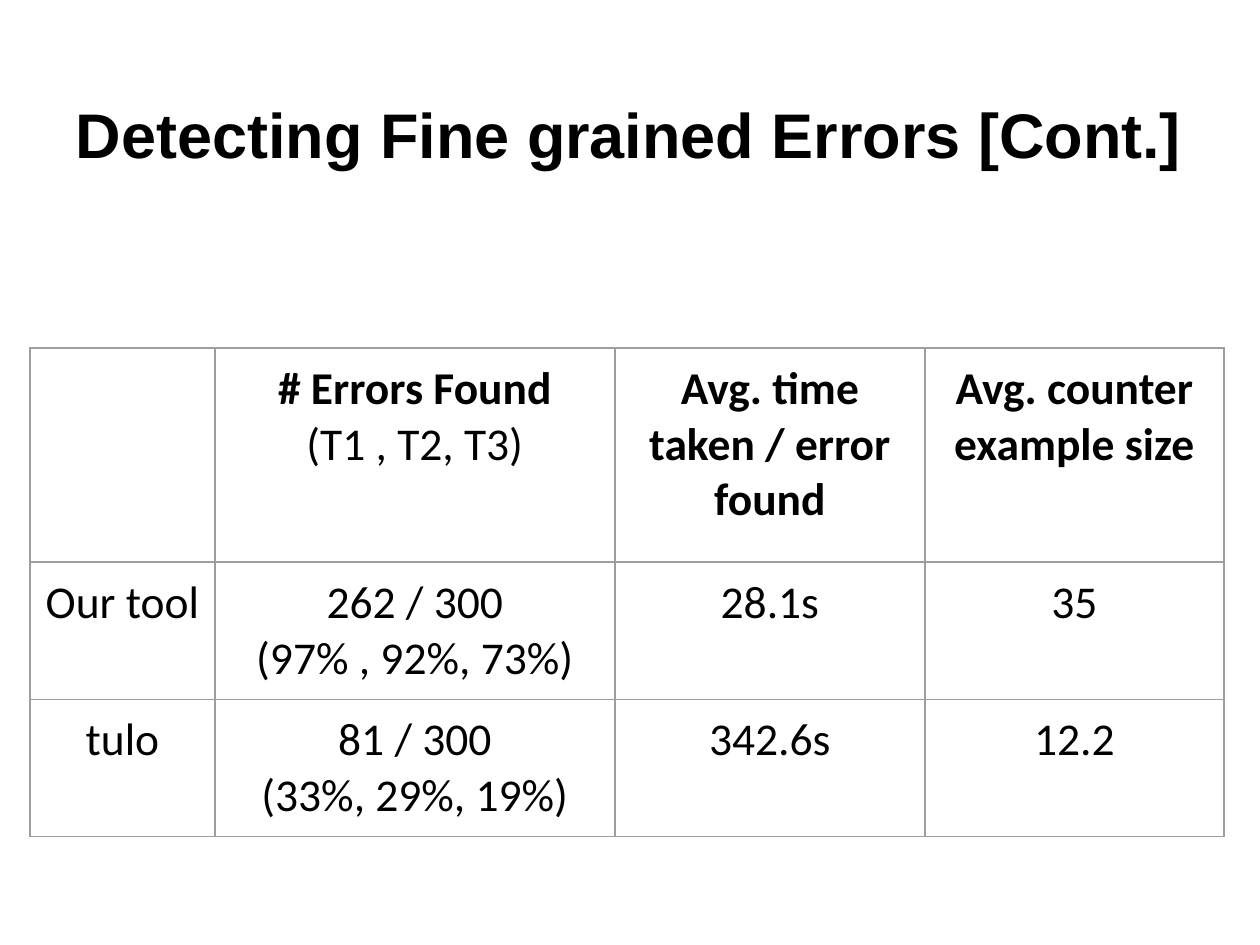
from dataclasses import dataclass

from lxml import etree
from pptx import Presentation
from pptx.dml.color import RGBColor
from pptx.enum.text import MSO_ANCHOR, PP_ALIGN
from pptx.oxml.ns import qn
from pptx.util import Pt

PX = 914400 // 126  # EMU per pixel
BLACK = RGBColor(0x00, 0x00, 0x00)
GRAY = RGBColor(0x9E, 0x9E, 0x9E)
LEFT, CENTER = PP_ALIGN.LEFT, PP_ALIGN.CENTER
TOP, BOTTOM = MSO_ANCHOR.TOP, MSO_ANCHOR.BOTTOM
INSET = 13
TITLE_ONLY = 5


@dataclass(frozen=True)
class Line:
    text: str
    bold: bool = False


COLUMN_WIDTHS = (185, 400, 310, 299)
ROW_HEIGHTS = (214, 136, 137)
ROWS = (
    (
        (),
        (Line("# Errors Found", True), Line("(T1 , T2, T3)")),
        (Line("Avg. time taken / error found", True),),
        (Line("Avg. counter example size", True),),
    ),
    (
        (Line("Our tool"),),
        (Line("262 / 300"), Line("(97% , 92%, 73%)")),
        (Line("28.1s"),),
        (Line("35"),),
    ),
    (
        (Line("tulo"),),
        (Line("81 / 300"), Line("(33%, 29%, 19%)")),
        (Line("342.6s"),),
        (Line("12.2"),),
    ),
)


def px(length: int) -> int:
    return length * PX


def set_insets(box) -> None:
    box.margin_left = box.margin_right = px(INSET)
    box.margin_top = box.margin_bottom = px(INSET)


def add_span(para, text: str, font: str, size: int, bold: bool) -> None:
    span = para.add_run()
    span.text = text
    span.font.name = font
    span.font.size = Pt(size)
    span.font.bold = bold
    span.font.color.rgb = BLACK


def set_borders(cell) -> None:
    properties = cell._tc.get_or_add_tcPr()
    for index, side in enumerate(("lnL", "lnR", "lnT", "lnB")):
        line = etree.Element(qn(f"a:{side}"), w=str(Pt(0.75)))
        fill = etree.SubElement(line, qn("a:solidFill"))
        etree.SubElement(fill, qn("a:srgbClr"), val=str(GRAY))
        properties.insert(index, line)


def fill_cell(cell, lines: tuple[Line, ...]) -> None:
    cell.fill.background()
    cell.vertical_anchor = TOP
    set_insets(cell)
    set_borders(cell)
    frame = cell.text_frame
    for index, line in enumerate(lines):
        para = frame.add_paragraph() if index else frame.paragraphs[0]
        para.alignment = CENTER
        add_span(para, line.text, "Calibri", 26, line.bold)


def add_title(page, text: str) -> None:
    title = page.shapes.title
    title.left, title.top = px(63), px(38)
    title.width, title.height = px(1134), px(146)
    frame = title.text_frame
    frame.word_wrap = True
    frame.vertical_anchor = BOTTOM
    set_insets(frame)
    para = frame.paragraphs[0]
    para.alignment = LEFT
    add_span(para, text, "Arial", 36, True)


def add_results(page) -> None:
    table = page.shapes.add_table(
        len(ROWS), len(COLUMN_WIDTHS), px(30), px(348),
        px(sum(COLUMN_WIDTHS)), px(sum(ROW_HEIGHTS)),
    ).table
    table.first_row = table.horz_banding = False
    for column, width in zip(table.columns, COLUMN_WIDTHS):
        column.width = px(width)
    for row, height, contents in zip(table.rows, ROW_HEIGHTS, ROWS):
        row.height = px(height)
        for cell, lines in zip(row.cells, contents):
            fill_cell(cell, lines)


def main() -> None:
    deck = Presentation()
    deck.slide_width, deck.slide_height = px(1260), px(945)
    page = deck.slides.add_slide(deck.slide_layouts[TITLE_ONLY])

    # Heading
    add_title(page, "Detecting Fine grained Errors [Cont.]")

    # Comparison of the two tools
    add_results(page)

    deck.save("out.pptx")


if __name__ == "__main__":
    main()
